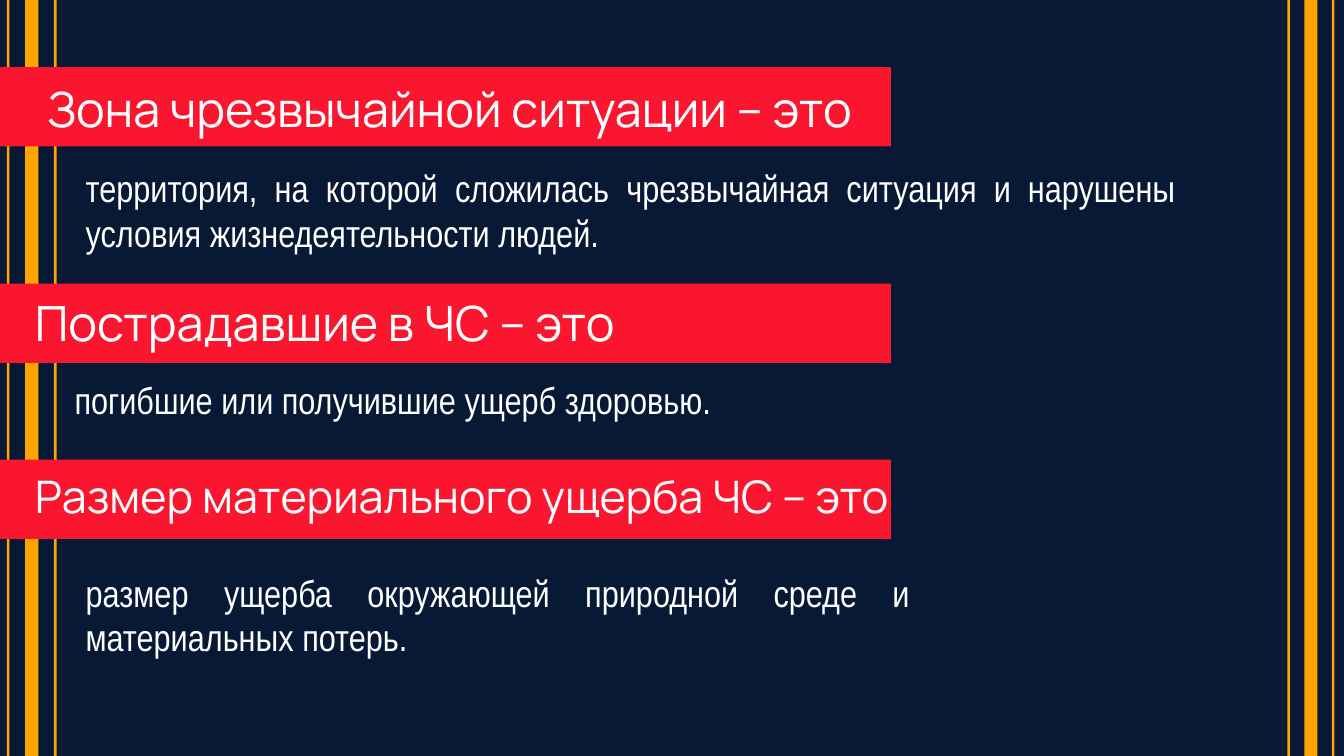
from dataclasses import dataclass

from pptx import Presentation
from pptx import util as u
from pptx.dml.color import RGBColor
from pptx.enum import shapes, text


@dataclass(frozen=True)
class Theme:
    back: str = "081935"
    gold: str = "FFA400"
    red: str = "FA162E"
    white: str = "FFFFFF"
    head: str = "Manrope"
    body: str = "Arial Narrow"
    large: int = 26
    mid: int = 24
    small: int = 20


T = Theme()
WIDE, HIGH = 25.4, 14.29

# Bar top, heading offset, heading width, heading size, heading,
# body offset, body size, body text
CARDS = [
    (1.27, (0.64, -0.03), 21.41, T.large, "Зона чрезвычайной ситуации – это",
     (1.07, 1.6), (21.41, 2.59),
     "территория, на которой сложилась чрезвычайная ситуация "
     "и нарушены условия жизнедеятельности людей."),
    (5.36, (0.41, -0.08), 16.41, T.large, "Пострадавшие в ЧС – это",
     (0.86, 1.52), (16.38, 1.68),
     "погибшие или получившие ущерб здоровью."),
    (8.69, (0.41, -0.08), 16.84, T.mid, "Размер материального ущерба ЧС – это",
     (1.07, 1.83), (16.38, 1.68),
     "размер ущерба окружающей природной среде и материальных потерь."),
]


def block(slide, box, fill):
    """Plain filled rectangle."""
    rect = slide.shapes.add_shape(
        shapes.MSO_SHAPE.RECTANGLE, *(u.Cm(n) for n in box))
    rect.shadow.inherit = False
    rect.fill.solid()
    rect.fill.fore_color.rgb = RGBColor.from_string(fill)
    rect.line.fill.background()


def write(shape, box, words, font, size, align):
    """Place a text holder and fill its one paragraph."""
    shape.left, shape.top, shape.width, shape.height = (u.Cm(n) for n in box)
    frame = shape.text_frame
    frame.word_wrap = True
    frame.auto_size = text.MSO_AUTO_SIZE.NONE
    frame.vertical_anchor = text.MSO_ANCHOR.TOP
    frame.margin_left = frame.margin_right = u.Cm(0.25)
    frame.margin_top = frame.margin_bottom = u.Cm(0.25)
    para = frame.paragraphs[0]
    para.alignment = align
    run = para.add_run()
    run.text = words
    run.font.name = font
    run.font.size = u.Pt(size)
    run.font.color.rgb = RGBColor.from_string(T.white)
    return para


def stripes(slide, box):
    """Thin, thick and thin stripe spread evenly over the box."""
    left, top, width, height = box
    thin, thick = 0.05, 0.25
    for step, size in enumerate((thin, thick, thin)):
        x = left + (width - size) * step / 2
        block(slide, (x, top, size, height), T.gold)


def card(slide, box, head, body, title=None):
    """Red bar with a heading on it and a definition below."""
    left, top, _, _ = box
    block(slide, box, T.red)

    # Heading, in the title placeholder where one is given
    (dx, dy), width, size, words = head
    if title is None:
        title = slide.shapes.add_textbox(0, 0, 0, 0)
    else:
        slide.shapes._spTree.append(title._element)  # above the bar
    write(title, (left + dx, top + dy, width, 1.6), words, T.head, size,
          text.PP_ALIGN.LEFT)

    # Definition
    (dx, dy), (width, height), words = body
    note = slide.shapes.add_textbox(0, 0, 0, 0)
    para = write(note, (left + dx, top + dy, width, height), words, T.body,
                 T.small, text.PP_ALIGN.JUSTIFY)
    para.space_after = u.Pt(12)
    para._p.get_or_add_pPr().set("marL", str(u.Cm(0.3)))


def main():
    deck = Presentation()
    deck.slide_width, deck.slide_height = u.Cm(WIDE), u.Cm(HIGH)
    slide = deck.slides.add_slide(deck.slide_layouts[5])
    slide.background.fill.solid()
    slide.background.fill.fore_color.rgb = RGBColor.from_string(T.back)

    # Side stripes
    for left, width in ((0.13, 0.94), (24.33, 0.89)):
        stripes(slide, (left, 0, width, HIGH))

    # Definitions; the first heading is the slide title
    title = slide.shapes.title
    for top, shift, width, size, words, *body in CARDS:
        card(slide, (0, top, 16.84, 1.5), (shift, width, size, words), body,
             title)
        title = None

    deck.save("out.pptx")


if __name__ == "__main__":
    main()
